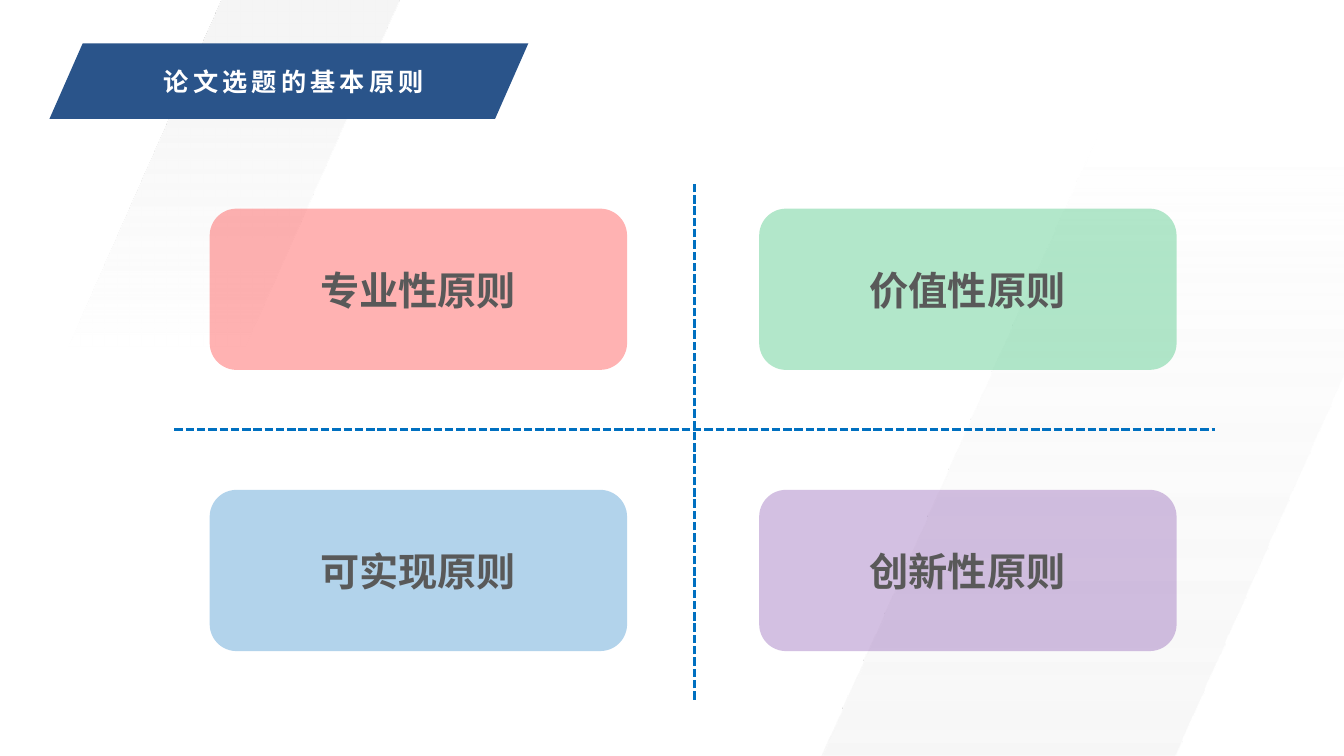
import pptx
import pptx.dml.color
import pptx.enum.dml
import pptx.enum.shapes
import pptx.enum.text
import pptx.oxml
import pptx.oxml.ns
import pptx.util

Inches = pptx.util.Inches
FONT = "Noto Sans CJK SC"
COLOURS = {
    "band": "F5F5F5",
    "banner": "2A548A",
    "title": "FFFFFF",
    "axis": "0070C0",
    "label": "595959",
    "red": "FF0000",
    "green": "00B050",
    "blue": "0070C0",
    "purple": "7030A0",
}


class SlideBuilder:
    def __init__(self, slide):
        self.slide = slide
        self.shapes = slide.shapes

    def rgb(self, name):
        return pptx.dml.color.RGBColor.from_string(COLOURS[name])

    def outline(self, points):
        first, *rest = [(Inches(x), Inches(y)) for x, y in points]
        builder = self.shapes.build_freeform(*first)
        builder.add_line_segments(rest, close=True)
        shape = builder.convert_to_shape()
        shape.shadow.inherit = False
        shape.line.fill.background()
        return shape

    def band(self, points, start_alpha, end_alpha):
        """Draw a slanted band that fades from top to bottom; alphas are percentages."""
        shape = self.outline(points)
        stops = "".join(
            f'<a:gs pos="{position * 1000}"><a:srgbClr val="{COLOURS["band"]}">'
            f'<a:alpha val="{alpha * 1000}"/></a:srgbClr></a:gs>'
            for position, alpha in ((9, start_alpha), (100, end_alpha))
        )
        gradient = pptx.oxml.parse_xml(
            f'<a:gradFill {pptx.oxml.ns.nsdecls("a")} rotWithShape="1">'
            f'<a:gsLst>{stops}</a:gsLst><a:lin ang="5400000" scaled="0"/></a:gradFill>'
        )
        shape._element.spPr.find(pptx.oxml.ns.qn("a:custGeom")).addnext(gradient)

    def banner(self, points):
        shape = self.outline(points)
        shape.fill.solid()
        shape.fill.fore_color.rgb = self.rgb("banner")

    def set_text(self, frame, text, size, colour, anchor):
        """Fill a text frame with one bold centred paragraph and return its font properties."""
        frame.word_wrap = True
        frame.vertical_anchor = anchor
        para = frame.paragraphs[0]
        para.text = text
        para.alignment = pptx.enum.text.PP_ALIGN.CENTER
        font = para.font
        font.size = pptx.util.Pt(size)
        font.bold = True
        font.color.rgb = self.rgb(colour)
        font.name = FONT
        properties = para._p.pPr.find(pptx.oxml.ns.qn("a:defRPr"))
        properties.append(pptx.oxml.parse_xml(
            f'<a:ea {pptx.oxml.ns.nsdecls("a")} typeface="{FONT}"/>'))
        return properties

    def title(self, text, left, top, width, height):
        title = self.shapes.title
        title.left, title.top = Inches(left), Inches(top)
        title.width, title.height = Inches(width), Inches(height)
        properties = self.set_text(title.text_frame, text, 18, "title",
                                   pptx.enum.text.MSO_ANCHOR.TOP)
        properties.set("spc", "300")
        title.text_frame.paragraphs[0].line_spacing = 0.9
        title.text_frame.auto_size = pptx.enum.text.MSO_AUTO_SIZE.NONE
        # Bring the title in front of its banner.
        self.shapes._spTree.append(title._element)

    def axis(self, x1, y1, x2, y2):
        line = self.shapes.add_connector(
            pptx.enum.shapes.MSO_CONNECTOR.STRAIGHT,
            Inches(x1), Inches(y1), Inches(x2), Inches(y2))
        line.line.color.rgb = self.rgb("axis")
        line.line.width = pptx.util.Pt(2)
        line.line.dash_style = pptx.enum.dml.MSO_LINE.SQUARE_DOT
        line._element.spPr.append(pptx.oxml.parse_xml(
            f'<a:effectLst {pptx.oxml.ns.nsdecls("a")}/>'))

    def card(self, left, top, width, height, colour):
        card = self.shapes.add_shape(
            pptx.enum.shapes.MSO_SHAPE.ROUNDED_RECTANGLE,
            Inches(left), Inches(top), Inches(width), Inches(height))
        card.shadow.inherit = False
        card.line.fill.background()
        card.fill.solid()
        card.fill.fore_color.rgb = self.rgb(colour)
        shade = card._element.spPr.find(".//" + pptx.oxml.ns.qn("a:srgbClr"))
        shade.append(pptx.oxml.parse_xml(
            f'<a:alpha {pptx.oxml.ns.nsdecls("a")} val="30000"/>'))

    def label(self, text, left, top, width, height):
        box = self.shapes.add_textbox(
            Inches(left), Inches(top), Inches(width), Inches(height))
        self.set_text(box.text_frame, text, 28, "label",
                      pptx.enum.text.MSO_ANCHOR.MIDDLE)


def main():
    deck = pptx.Presentation()
    deck.slide_width, deck.slide_height = Inches(13.33), Inches(7.5)
    title_only = deck.slide_layouts[5]
    page = SlideBuilder(deck.slides.add_slide(title_only))

    page.band([(11.18, 0.66), (14.68, 0.66), (11.65, 7.5), (8.15, 7.5)], 0, 76)
    page.band([(2.2, 0), (3.96, 0), (2.43, 3.44), (0.68, 3.44)], 100, 0)
    page.banner([(0.82, 0.43), (5.24, 0.43), (4.91, 1.18), (0.49, 1.18)])
    page.title("论文选题的基本原则", 0.93, 0.64, 3.97, 0.52)

    page.axis(1.73, 4.26, 12.05, 4.26)
    page.axis(6.89, 6.94, 6.89, 1.8)

    principles = [
        ("专业性原则", "red"),
        ("价值性原则", "green"),
        ("可实现原则", "blue"),
        ("创新性原则", "purple"),
    ]
    corners = [(left, top) for top in (2.07, 4.86) for left in (2.08, 7.53)]
    for (left, top), (_, colour) in zip(corners, principles):
        page.card(left, top, 4.14, 1.6, colour)
    for (left, top), (text, _) in zip(corners, principles):
        page.label(text, left + 0.81, top + 0.52, 2.51, 0.57)

    deck.save("out.pptx")


if __name__ == "__main__":
    main()
